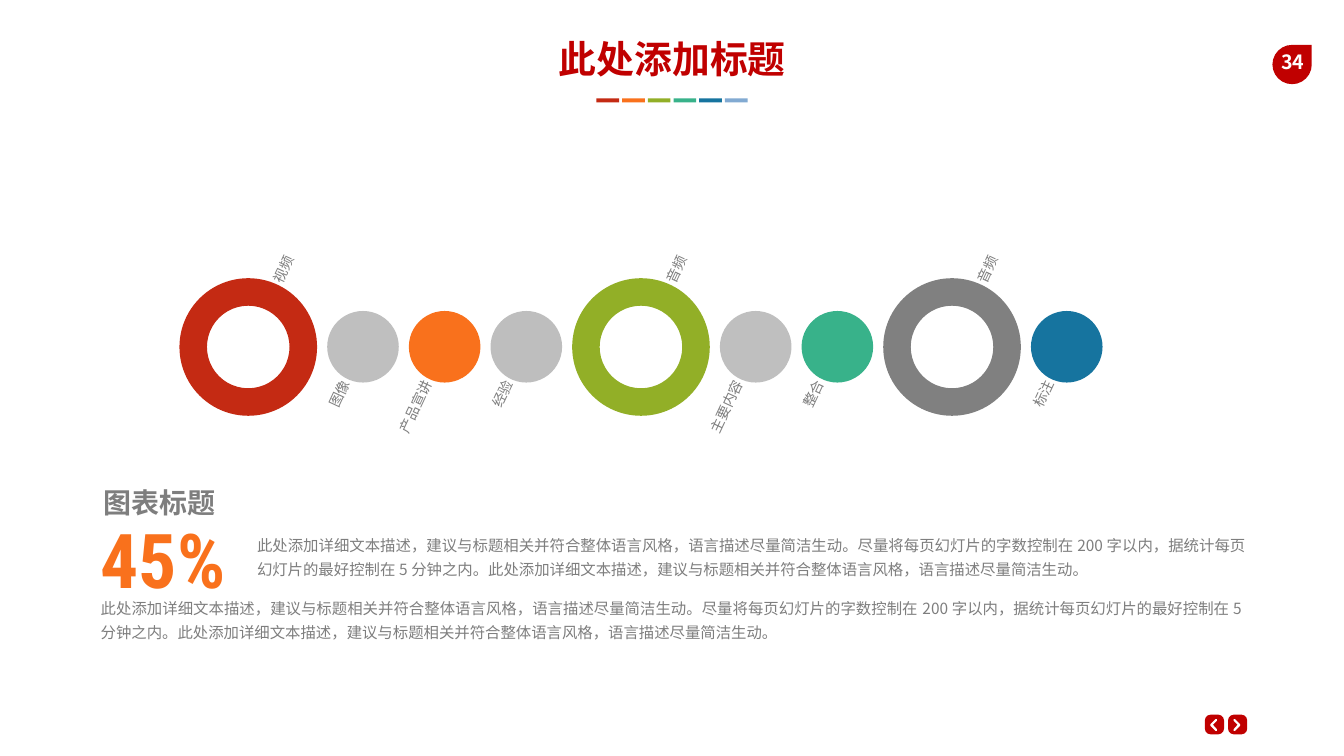
import dataclasses

import pptx
import pptx.dml.color
import pptx.enum.shapes
import pptx.enum.text
import pptx.oxml.ns
import pptx.util
from lxml import etree

PX = 9144  # EMU in one px: 100 px to the inch
KIND = pptx.enum.shapes.MSO_SHAPE
ALIGN = pptx.enum.text.PP_ALIGN
ANCHOR = pptx.enum.text.MSO_ANCHOR
SIZING = pptx.enum.text.MSO_AUTO_SIZE


@dataclasses.dataclass(frozen=True)
class Theme:
    brand: str = "C00000"
    white: str = "FFFFFF"
    text: str = "7E7E7E"
    red: str = "C42A13"
    orange: str = "F9711C"
    lime: str = "92AF27"
    green: str = "38B28A"
    blue: str = "16749F"
    sky: str = "82AAD2"
    gray: str = "808080"
    pale: str = "BFBFBF"
    dim: str = "BEBEBE"
    sans: str = "Noto Sans CJK SC"
    label: str = "Manrope"
    narrow: str = "Roboto Condensed"
    small: int = 20
    body: int = 22
    page: int = 28
    head: int = 40
    title: int = 54
    huge: int = 108


def color(code):
    return pptx.dml.color.RGBColor.from_string(code)


def write(shape, text, size, tint, font, bold=False, align=ALIGN.LEFT,
          space=None, wrap=True, grow=True, anchor=ANCHOR.TOP,
          inset=(10, 5, 10, 5)):
    """Fill a shape with one paragraph; inset is left, top, right, bottom."""
    frame = shape.text_frame
    frame.word_wrap = wrap
    frame.auto_size = SIZING.SHAPE_TO_FIT_TEXT if grow else SIZING.NONE
    frame.vertical_anchor = anchor
    (frame.margin_left, frame.margin_top,
     frame.margin_right, frame.margin_bottom) = [n * PX for n in inset]
    para = frame.paragraphs[0]
    para.alignment = align
    if space:
        para.line_spacing = space
    run = para.add_run()
    run.text = text
    run.font.size = pptx.util.Pt(size)
    run.font.bold = bold
    run.font.name = font
    run.font.color.rgb = color(tint)
    # Chinese text takes its font from a:ea
    east = etree.SubElement(run.font._element, pptx.oxml.ns.qn("a:ea"))
    east.set("typeface", font)


class Deck:
    def __init__(self, theme, wide, high):
        self.theme = theme
        self.file = pptx.Presentation()
        self.file.slide_width = wide * PX
        self.file.slide_height = high * PX
        self.slide = self.file.slides.add_slide(self.file.slide_layouts[5])

    def paint(self, shape, tint):
        shape.shadow.inherit = False
        shape.fill.solid()
        shape.fill.fore_color.rgb = color(tint)
        shape.line.fill.background()
        return shape

    def shape(self, kind, box, tint, adjust=None):
        item = self.slide.shapes.add_shape(kind, *[n * PX for n in box])
        if adjust is not None:
            item.adjustments[0] = adjust
        return self.paint(item, tint)

    def outline(self, points, tint):
        pen = self.slide.shapes.build_freeform(*points[0], scale=PX)
        pen.add_line_segments(points[1:], close=True)
        return self.paint(pen.convert_to_shape(), tint)

    def text(self, box, text, turn=0, **style):
        item = self.slide.shapes.add_textbox(*[n * PX for n in box])
        item.rotation = turn
        write(item, text, **style)

    def title(self, box, text, **style):
        item = self.slide.shapes.title
        item.left, item.top, item.width, item.height = [n * PX for n in box]
        write(item, text, **style)


def add_nav(deck):
    """Draw the back and forward buttons."""
    look = deck.theme
    arrow = [(13, 9), (13, 12), (10, 12), (0, 2), (0, -1), (10, -11),
             (13, -11), (13, -8), (5, 0)]
    for left, tip, way in ((2390, 2401, 1), (2436, 2460, -1)):
        deck.shape(KIND.ROUNDED_RECTANGLE, (left, 1418, 38, 39),
                   look.brand, 0.3)
        deck.outline([(tip + way * x, 1438 + y) for x, y in arrow],
                     look.white)


def add_chain(deck):
    """Lay big rings and small discs in a row, each with a slanted label."""
    look = deck.theme
    ring, disc, gap, mid = 273, 142, 20, 688
    style = dict(turn=295, size=look.small, tint=look.text, font=look.label,
                 space=0.9, grow=False, anchor=ANCHOR.MIDDLE)
    chain = [
        (True, "视频", look.red),
        (False, "图像", look.pale),
        (False, "产品宣讲", look.orange),
        (False, "经验", look.dim),
        (True, "音频", look.lime),
        (False, "主要内容", look.pale),
        (False, "整合", look.green),
        (True, "音频", look.gray),
        (False, "标注", look.blue),
    ]
    left = 356
    for big, name, tint in chain:
        size = ring if big else disc
        box = (left, mid - size // 2, size, size)
        if big:
            deck.shape(KIND.DONUT, box, tint, 0.2)
            deck.text((left + 96, 330, 339, 163), name,
                      inset=(6, 0, 0, 0), **style)
        else:
            deck.shape(KIND.OVAL, box, tint)
            deck.text((left - 168, 814, 293, 141), name, align=ALIGN.RIGHT,
                      inset=(0, 0, 6, 0), **style)
        left += size + gap


def add_notes(deck):
    """Write the chart heading, the figure and the two descriptions."""
    look = deck.theme
    detail = ("此处添加详细文本描述，建议与标题相关并符合整体语言风格，语言描述尽量简洁生动。"
              "尽量将每页幻灯片的字数控制在200字以内，据统计每页幻灯片的最好控制在5分钟之内。"
              "此处添加详细文本描述，建议与标题相关并符合整体语言风格，语言描述尽量简洁生动。")
    for box in ((190, 1172, 2290, 106), (500, 1047, 1980, 106)):
        deck.text(box, detail, size=look.body, tint=look.text,
                  font=look.sans, align=ALIGN.JUSTIFY, space=1.3)
    deck.text((195, 958, 245, 77), "图表标题", size=look.head,
              tint=look.text, font=look.sans, bold=True, wrap=False)
    deck.text((190, 1012, 359, 192), "45%", size=look.huge,
              tint=look.orange, font=look.narrow, bold=True)


def main():
    look = Theme()
    deck = Deck(look, 2666, 1500)
    add_nav(deck)
    deck.shape(KIND.TEAR, (2524, 89, 78, 78), look.brand)
    deck.text((2516, 90, 97, 67), "34", size=look.page, tint=look.white,
              font=look.sans, bold=True, align=ALIGN.CENTER, wrap=False,
              inset=(20, 10, 20, 10))
    add_chain(deck)
    add_notes(deck)
    deck.title((843, 65, 981, 101), "此处添加标题", size=look.title,
               tint=look.brand, font=look.sans, bold=True,
               align=ALIGN.CENTER)
    bars = (look.red, look.orange, look.lime, look.green, look.blue, look.sky)
    for i, tint in enumerate(bars):
        deck.shape(KIND.RECTANGLE, (1183 + 51 * i, 195, 45, 8), tint)
    deck.file.save("out.pptx")


if __name__ == "__main__":
    main()
